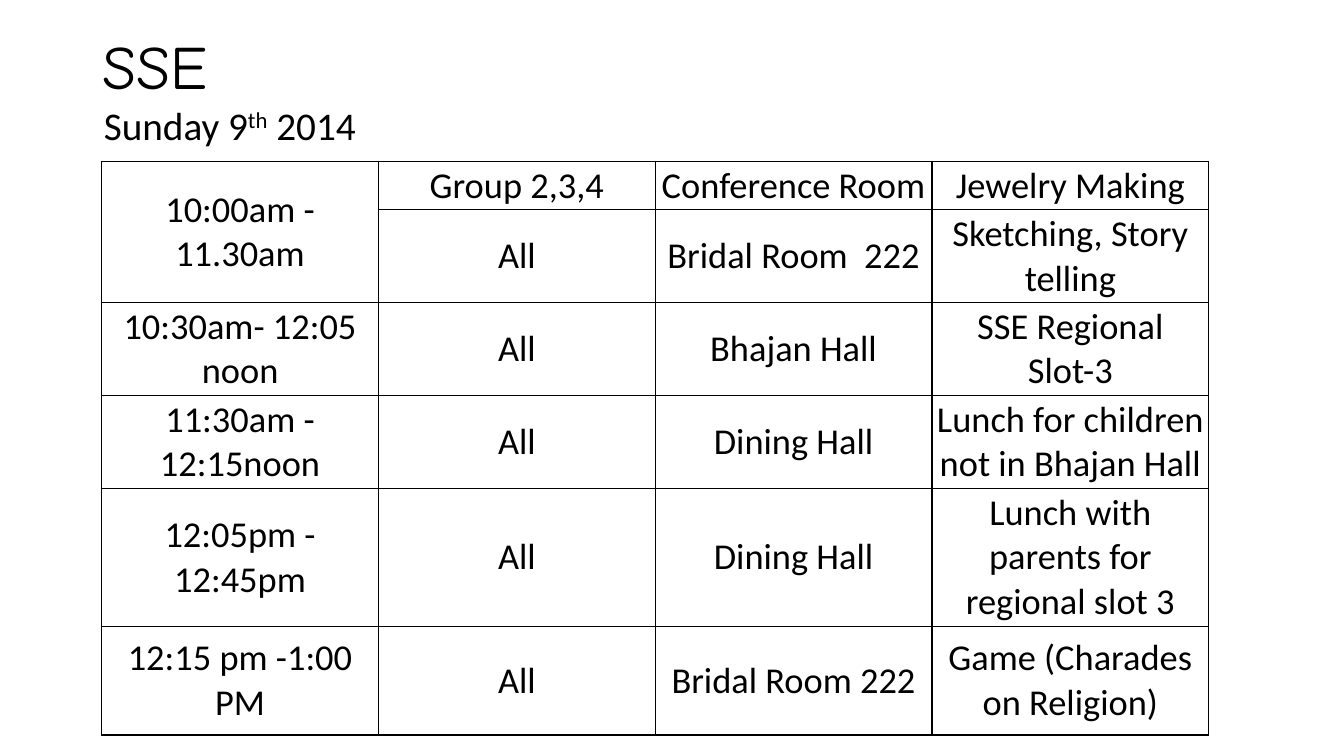
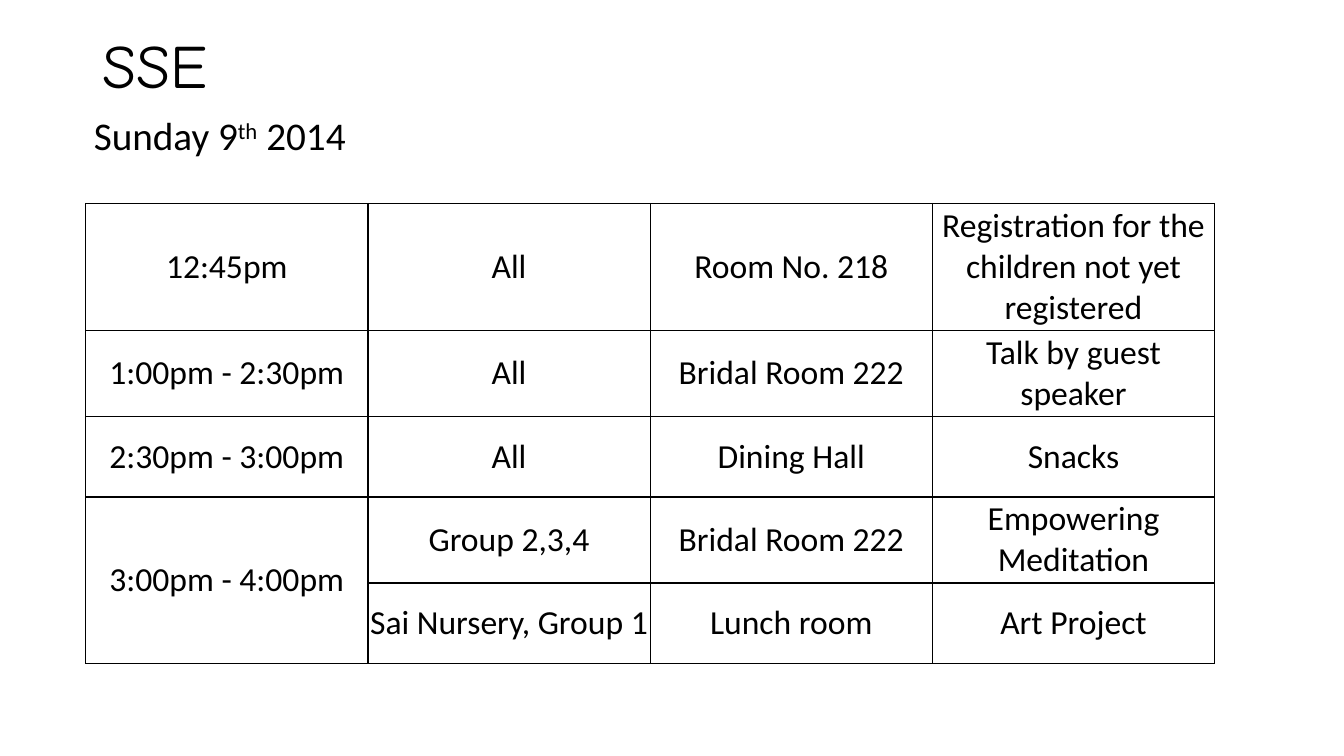
from lxml import etree
from pptx import Presentation
from pptx.dml.color import RGBColor
from pptx.enum.text import MSO_ANCHOR as Anchor, MSO_AUTO_SIZE as AutoSize, PP_ALIGN as Align
from pptx.oxml.ns import qn
from pptx.util import Pt

# Shared styles
COLORS = {"text": "000000", "border": "000000", "background": "FFFFFF"}
INK = RGBColor.from_string(COLORS["text"])
TITLE_FONT = {"name": "Comic Neue", "size": Pt(44), "bold": False}
DATE_FONT = {"name": "Calibri", "size": Pt(28)}
CELL_FORMAT = {
    "vertical_anchor": Anchor.MIDDLE,
    "margin_left": Pt(1.4), "margin_right": Pt(1.4),
    "margin_top": Pt(1.4), "margin_bottom": Pt(1.4),
}
DATE_RUNS = [("Sunday 9", False), ("th", True), (" 2014", False)]

# Schedules: None continues the cell above; boxes are left, top, width, height
SCHEDULES = [
    {
        "title_box": (66.2, 8.6, 828, 82),
        "date_box": (67, 72.7, 828, 396),
        "table_box": (72.7, 115.2, 790.8),
        "row_heights": [26, 59, 59, 59, 77.8, 77.8],
        "text_size": 26,
        "rows": [
            ("10:00am - 11.30am", "Group 2,3,4", "Conference Room", "Jewelry Making"),
            (None, "All", "Bridal Room  222", "Sketching, Story telling"),
            ("10:30am- 12:05 noon", "All", "Bhajan Hall", "SSE Regional Slot-3"),
            ("11:30am - 12:15noon", "All", "Dining Hall", "Lunch for children not in Bhajan Hall"),
            ("12:05pm - 12:45pm", "All", "Dining Hall", "Lunch with parents for regional slot 3"),
            ("12:15 pm -1:00 PM", "All", "Bridal Room 222", "Game (Charades on Religion)"),
        ],
    },
    {
        "title_box": (66.2, 11.5, 828, 75),
        "date_box": (59.8, 79.9, 828, 383),
        "table_box": (61.2, 145.4, 806.4),
        "row_heights": [85, 57.6, 57.6, 57.6, 57.6],
        "text_size": 24,
        "rows": [
            ("12:45pm", "All", "Room No. 218", "Registration for the children not yet registered"),
            ("1:00pm - 2:30pm", "All", "Bridal Room 222", "Talk by guest speaker"),
            ("2:30pm - 3:00pm", "All", "Dining Hall", "Snacks"),
            ("3:00pm - 4:00pm", "Group 2,3,4", "Bridal Room 222", "Empowering Meditation"),
            (None, "Sai Nursery, Group 1", "Lunch room", "Art Project"),
        ],
    },
]


def format_placeholder(shape, box, anchor, font_format):
    shape.left, shape.top, shape.width, shape.height = [Pt(length) for length in box]
    frame = shape.text_frame
    frame.auto_size = AutoSize.NONE
    frame.vertical_anchor = anchor
    paragraph = frame.paragraphs[0]
    paragraph.alignment = Align.LEFT
    paragraph.line_spacing = 0.9
    paragraph.space_before = Pt(0)
    for run in paragraph.runs:
        run.font.color.rgb = INK
        for name, value in font_format.items():
            setattr(run.font, name, value)


def add_borders(cell):
    properties = cell._tc.get_or_add_tcPr()
    for side in ("lnL", "lnR", "lnT", "lnB"):
        line = etree.SubElement(properties, qn(f"a:{side}"), w=str(Pt(1)))
        fill = etree.SubElement(line, qn("a:solidFill"))
        etree.SubElement(fill, qn("a:srgbClr"), val=COLORS["border"])


presentation = Presentation()
presentation.slide_width, presentation.slide_height = Pt(960), Pt(540)
background = presentation.slide_master.background.fill
background.solid()
background.fore_color.rgb = RGBColor.from_string(COLORS["background"])

for schedule in SCHEDULES:
    slide = presentation.slides.add_slide(presentation.slide_layouts[1])

    # Title
    title = slide.shapes.title
    title.text_frame.text = "SSE"
    format_placeholder(title, schedule["title_box"], Anchor.MIDDLE, TITLE_FONT)

    # Date line, without bullet
    date = slide.placeholders[1]
    paragraph = date.text_frame.paragraphs[0]
    paragraph_properties = paragraph._p.get_or_add_pPr()
    paragraph_properties.set("marL", "0")
    paragraph_properties.set("indent", "0")
    etree.SubElement(paragraph_properties, qn("a:buNone"))
    for text, raised in DATE_RUNS:
        run = paragraph.add_run()
        run.text = text
        if raised:
            run._r.get_or_add_rPr().set("baseline", "30000")
    format_placeholder(date, schedule["date_box"], Anchor.TOP, DATE_FONT)

    # Timetable
    rows, heights = schedule["rows"], schedule["row_heights"]
    left, top, width = schedule["table_box"]
    table = slide.shapes.add_table(
        len(rows), len(rows[0]), Pt(left), Pt(top), Pt(width), Pt(sum(heights))).table
    table.first_row = table.horz_banding = False
    for column in table.columns:
        column.width = Pt(width / len(rows[0]))
    for row_index, (texts, height) in enumerate(zip(rows, heights)):
        table.rows[row_index].height = Pt(height)
        for column_index, text in enumerate(texts):
            cell = table.cell(row_index, column_index)
            add_borders(cell)
            cell.fill.background()
            for name, value in CELL_FORMAT.items():
                setattr(cell, name, value)
            if text is None:
                table.cell(row_index - 1, column_index).merge(cell)
                continue
            cell.text = text
            paragraph = cell.text_frame.paragraphs[0]
            paragraph.alignment = Align.CENTER
            font = paragraph.runs[0].font
            font.name, font.size = "Calibri", Pt(schedule["text_size"])
            font.color.rgb = INK

presentation.save("out.pptx")
